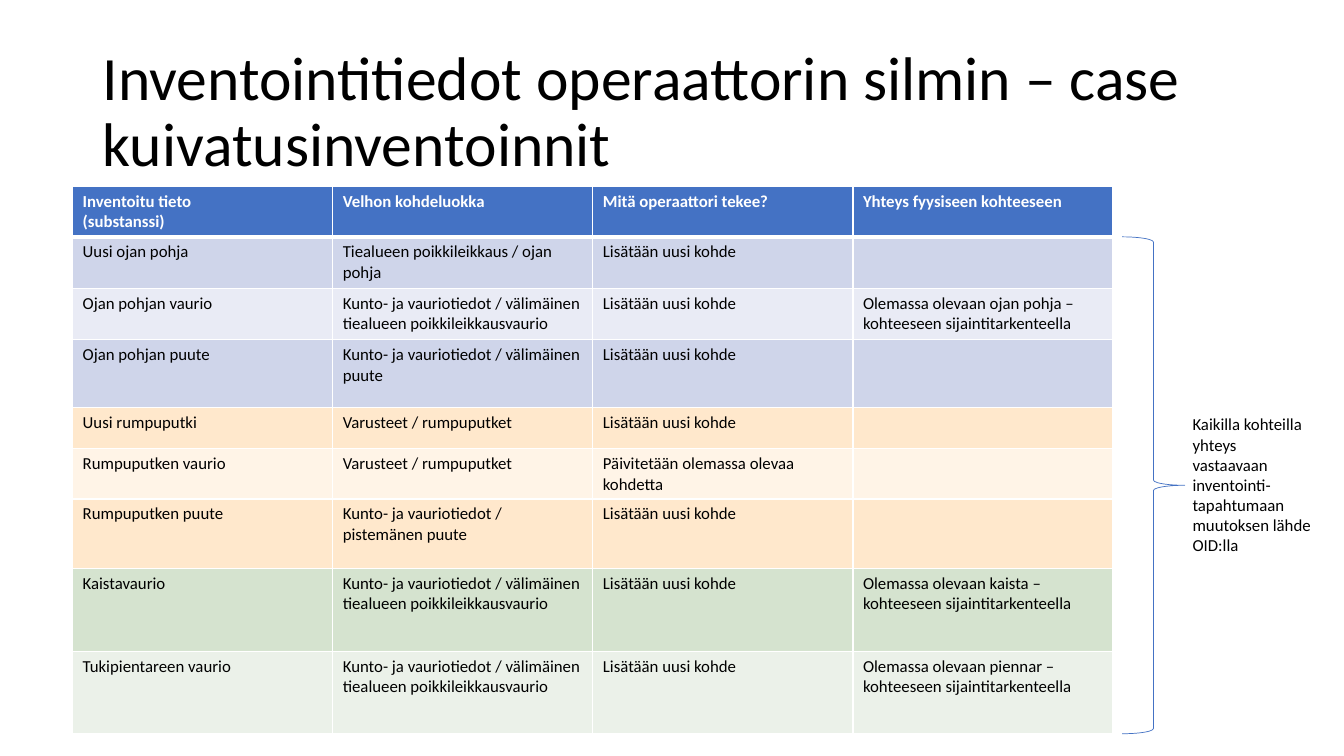
import pptx
import pptx.util
import pptx.dml.color
import pptx.enum.shapes
import pptx.enum.text
import pptx.oxml

RGB = pptx.dml.color.RGBColor
INCH = pptx.util.Inches
PT = pptx.util.Pt
WHITE = RGB(0xFF, 0xFF, 0xFF)
BLACK = RGB(0, 0, 0)
BLUE = RGB(0x44, 0x72, 0xC4)
SKY, MIST = RGB(0xCF, 0xD5, 0xEA), RGB(0xE9, 0xEB, 0xF5)
PEACH, CREAM = RGB(0xFF, 0xE8, 0xCC), RGB(0xFF, 0xF4, 0xE7)
GREEN, PALE = RGB(0xD5, 0xE3, 0xCF), RGB(0xEB, 0xF1, 0xE9)

# Content
TITLE = "Inventointitiedot operaattorin silmin – case kuivatusinventoinnit"
NOTE = ("Kaikilla kohteilla yhteys\nvastaavaan inventointi-tapahtumaan\n"
        "muutoksen lähde OID:lla")
ADD = "Lisätään uusi kohde"
PIPE = "Varusteet / rumpuputket"
CROSS = "Kunto- ja vauriotiedot / välimäinen tiealueen poikkileikkausvaurio"
LINK = "Olemassa olevaan {} –kohteeseen sijaintitarkenteella"

# Each table: rows of (height, fill, cell texts)
DITCH = [
    (0.5, BLUE, ("Inventoitu tieto\n(substanssi)", "Velhon kohdeluokka",
                 "Mitä operaattori tekee?", "Yhteys fyysiseen kohteeseen")),
    (0.51, SKY, ("Uusi ojan pohja", "Tiealueen poikkileikkaus / ojan pohja",
                 ADD, "")),
    (0.51, MIST, ("Ojan pohjan vaurio", CROSS, ADD, LINK.format("ojan pohja"))),
    (0.67, SKY, ("Ojan pohjan puute",
                 "Kunto- ja vauriotiedot / välimäinen puute", ADD, "")),
]
DRAIN = [
    (0.41, PEACH, ("Uusi rumpuputki", PIPE, ADD, "")),
    (0.5, CREAM, ("Rumpuputken vaurio", PIPE,
                  "Päivitetään olemassa olevaa kohdetta", "")),
    (0.69, PEACH, ("Rumpuputken puute",
                   "Kunto- ja vauriotiedot / pistemänen puute", ADD, "")),
]
LANE = [
    (0.82, GREEN, ("Kaistavaurio", CROSS, ADD, LINK.format("kaista"))),
    (0.82, PALE, ("Tukipientareen vaurio", CROSS, ADD, LINK.format("piennar"))),
]

# Grid
LEFT, TOP, COL, COUNT = 0.72, 1.85, 2.58, 4
HEAD = DITCH[0][0]
PLAIN = {"name": "Calibri", "size": PT(12), "bold": False}
STRONG = {**PLAIN, "bold": True}
LARGE = {**PLAIN, "size": PT(44)}


def write(frame, text, style, color):
    frame.word_wrap = True
    frame.text = text
    for para in frame.paragraphs:
        for run in para.runs:
            for key, value in style.items():
                setattr(run.font, key, value)
            run.font.color.rgb = color


def edge(cell, base):
    props = cell._tc.get_or_add_tcPr()
    sides = {"lnL": 1, "lnR": 1, "lnT": 1, "lnB": base}
    for spot, (side, width) in enumerate(sides.items()):
        props.insert(spot, pptx.oxml.parse_xml(
            f'<a:{side} xmlns:a="http://schemas.openxmlformats.org/drawingml/'
            f'2006/main" w="{PT(width)}"><a:solidFill><a:srgbClr '
            f'val="{WHITE}"/></a:solidFill></a:{side}>'))


def grid(slide, rows, top):
    """Draw one table and return its lower edge."""
    high = sum(row[0] for row in rows)
    table = slide.shapes.add_table(
        len(rows), COUNT, INCH(LEFT), INCH(top),
        INCH(COL * COUNT), INCH(high)).table
    table.first_row = rows is DITCH
    for col in table.columns:
        col.width = INCH(COL)
    for line, (tall, fill, texts) in zip(table.rows, rows):
        line.height = INCH(tall)
        head = fill == BLUE
        for cell, text in zip(line.cells, texts):
            cell.fill.solid()
            cell.fill.fore_color.rgb = fill
            edge(cell, 3 if head else 1)
            write(cell.text_frame, text, STRONG if head else PLAIN,
                  WHITE if head else BLACK)
    return top + high


def main():
    deck = pptx.Presentation()
    deck.slide_width, deck.slide_height = INCH(13.33), INCH(7.5)
    slide = deck.slides.add_slide(deck.slide_layouts[6])

    # Title
    title = slide.shapes.add_textbox(
        INCH(0.92), INCH(0.4), INCH(11.5), INCH(1.45)).text_frame
    write(title, TITLE, LARGE, BLACK)
    title.vertical_anchor = pptx.enum.text.MSO_ANCHOR.MIDDLE
    title.paragraphs[0].line_spacing = 0.9

    # Stacked tables
    low = TOP
    for rows in (DITCH, DRAIN, LANE):
        low = grid(slide, rows, low)

    # Brace beside all rows below the header
    start = TOP + HEAD
    brace = slide.shapes.add_shape(
        pptx.enum.shapes.MSO_SHAPE.RIGHT_BRACE,
        INCH(11.13), INCH(start), INCH(0.62), INCH(low - start))
    brace.shadow.inherit = False
    brace.fill.background()
    brace.line.color.rgb = BLUE
    brace.line.width = PT(0.5)

    # Note at the tip of the brace
    tall = 1.51
    note = slide.shapes.add_textbox(
        INCH(11.73), INCH((start + low - tall) / 2), INCH(1.44), INCH(tall))
    write(note.text_frame, NOTE, PLAIN, BLACK)

    deck.save("out.pptx")


if __name__ == "__main__":
    main()
